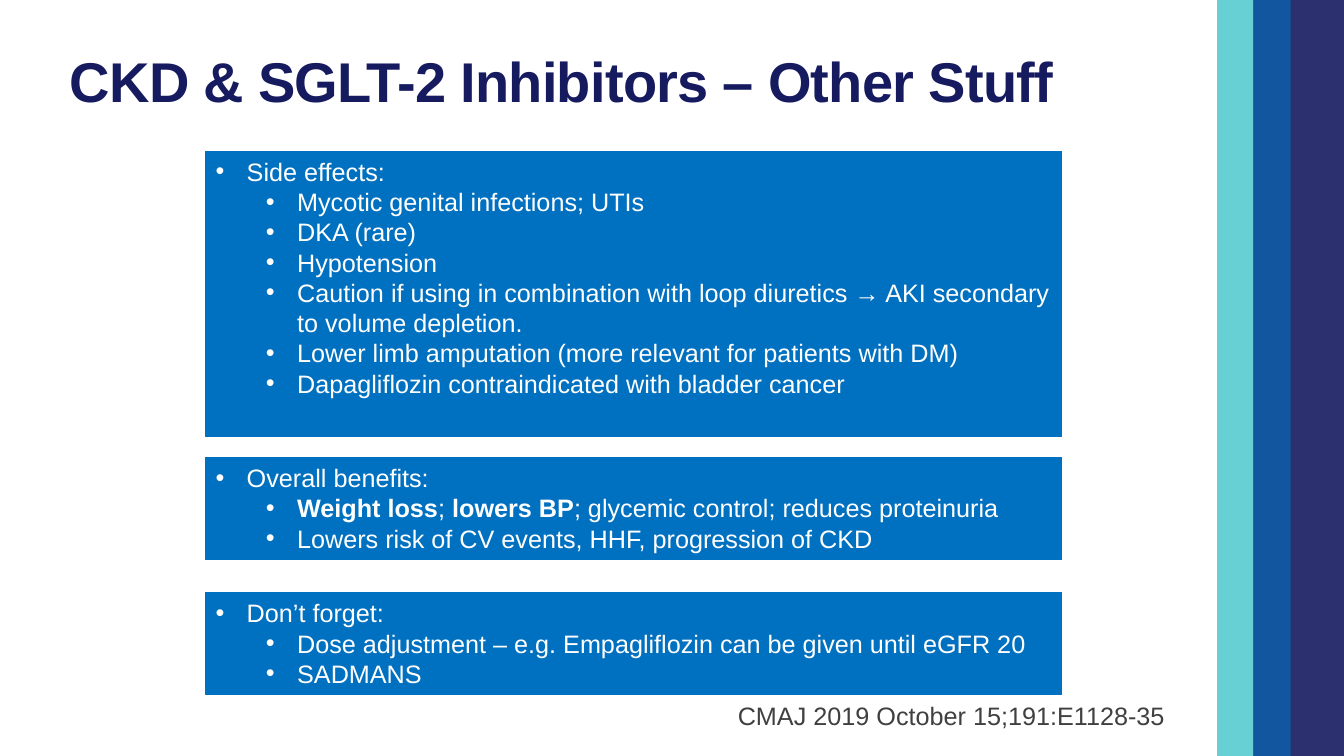
from lxml.etree import SubElement
from pptx import Presentation
from pptx.dml.color import RGBColor
from pptx.enum.shapes import MSO_SHAPE
from pptx.enum.text import MSO_ANCHOR, PP_ALIGN
from pptx.oxml.ns import qn
from pptx.util import Inches, Pt

COLORS = {
    "navy": "161A5F",
    "blue": "0070C0",
    "teal": "00B2B9",
    "grey": "414041",
    "white": "FFFFFF",
}
STRIPES = [
    (90.55, 2.78, "teal", 60),
    (93.25, 6.75, "navy", 90),
    (93.25, 2.78, "blue", 60),
]
PANELS = [
    (20, 37.73, "Side effects:", [
        [("Mycotic genital infections; UTIs", False)],
        [("DKA (rare)", False)],
        [("Hypotension", False)],
        [("Caution if using in combination with loop diuretics → "
          "AKI secondary to volume depletion.", False)],
        [("Lower limb amputation (more relevant for patients with DM)", False)],
        [("Dapagliflozin contraindicated with bladder cancer", False)],
    ]),
    (60.53, 13.47, "Overall benefits:", [
        [("Weight loss", True), ("; ", False), ("lowers BP", True),
         ("; glycemic control; reduces proteinuria", False)],
        [("Lowers risk of CV events, HHF, progression of CKD", False)],
    ]),
    (78.4, 13.47, "Don’t forget:", [
        [("Dose adjustment – e.g. Empagliflozin can be given until eGFR 20", False)],
        [("SADMANS", False)],
    ]),
]


class SlideBuilder:
    """Draws styled elements on one slide, placed in percent of its size."""

    def __init__(self, deck, font="Arial", body_size=18):
        self.deck = deck
        self.font = font
        self.body_size = body_size
        self.page = deck.slides.add_slide(deck.slide_layouts[6])

    def place(self, left, top, width, height):
        across, down = self.deck.slide_width / 100, self.deck.slide_height / 100
        return [round(length) for length in
                (left * across, top * down, width * across, height * down)]

    def rectangle(self, area, color, opacity=100):
        box = self.page.shapes.add_shape(MSO_SHAPE.RECTANGLE, *self.place(*area))
        box.shadow.inherit = False
        box.fill.solid()
        box.fill.fore_color.rgb = RGBColor.from_string(COLORS[color])
        box.line.fill.background()
        if opacity < 100:
            tint = box._element.spPr.find(".//" + qn("a:srgbClr"))
            SubElement(tint, qn("a:alpha"), val=str(opacity * 1000))
        return box

    def add_span(self, para, text, color, size=None, bold=False):
        span = para.add_run()
        span.text = text
        span.font.name = self.font
        span.font.size = Pt(size or self.body_size)
        span.font.bold = bold
        span.font.color.rgb = RGBColor.from_string(COLORS[color])
        return span

    def text_box(self, area):
        box = self.page.shapes.add_textbox(*self.place(*area))
        box.text_frame.word_wrap = True
        return box.text_frame

    def title(self, area, text):
        frame = self.text_box(area)
        frame.margin_left = frame.margin_right = 0
        frame.margin_top = frame.margin_bottom = 0
        para = frame.paragraphs[0]
        para.line_spacing = 0.9
        span = self.add_span(para, text, "navy", size=40, bold=True)
        span._r.get_or_add_rPr().set("spc", "-50")

    def citation(self, area, text):
        self.add_span(self.text_box(area).paragraphs[0], text, "grey")

    def bullet(self, para, level, spans):
        para.level = level
        para.alignment = PP_ALIGN.LEFT
        properties = para._p.get_or_add_pPr()
        properties.set("marL", str(Inches(0.31 + 0.5 * level)))
        properties.set("indent", str(-Inches(0.31)))
        SubElement(properties, qn("a:buFont"), typeface=self.font)
        SubElement(properties, qn("a:buChar"), char="•")
        for text, bold in spans:
            self.add_span(para, text, "white", bold=bold)

    def panel(self, area, heading, items):
        box = self.rectangle(area, "blue")
        box.line.color.rgb = RGBColor.from_string(COLORS["blue"])
        box.line.width = Pt(0.75)
        frame = box.text_frame
        frame.word_wrap = True
        frame.vertical_anchor = MSO_ANCHOR.TOP
        self.bullet(frame.paragraphs[0], 0, [(heading, False)])
        for spans in items:
            self.bullet(frame.add_paragraph(), 1, spans)


def main():
    deck = Presentation()
    deck.slide_width, deck.slide_height = Inches(13.33), Inches(7.5)
    slide = SlideBuilder(deck)
    for left, width, color, opacity in STRIPES:
        slide.rectangle((left, 0, width, 100), color, opacity)
    slide.title((5.18, 7.2, 83.95, 10.4), "CKD & SGLT-2 Inhibitors – Other Stuff")
    slide.citation((54.16, 92, 33.31, 5.33), "CMAJ 2019 October 15;191:E1128-35")
    for top, height, heading, items in PANELS:
        slide.panel((15.3, top, 63.69, height), heading, items)
    deck.save("out.pptx")


if __name__ == "__main__":
    main()
